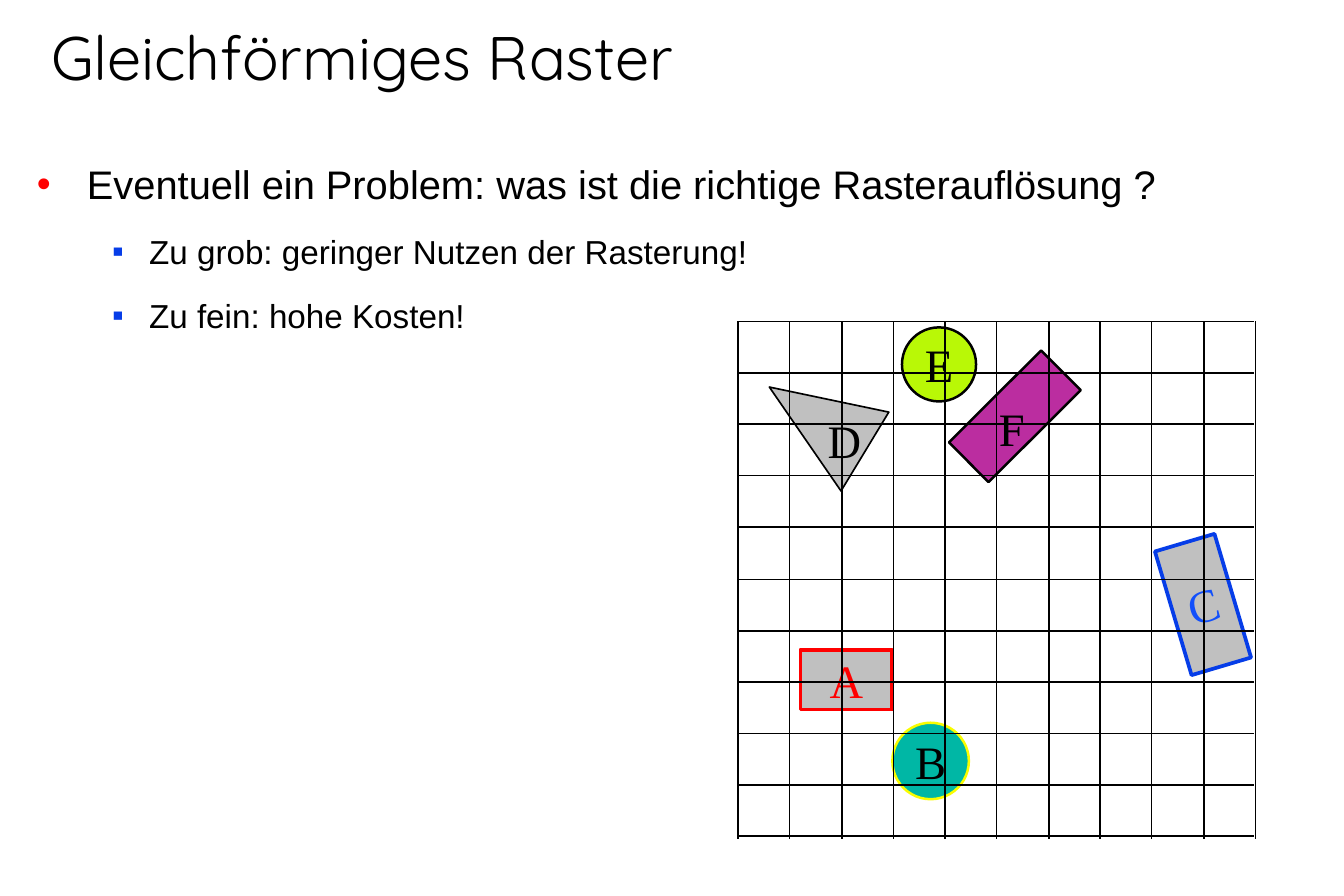
"""Build the slide on choosing the resolution of a uniform grid."""
from dataclasses import dataclass
from typing import Optional

from lxml.etree import SubElement
from pptx import Presentation
from pptx.dml.color import RGBColor
from pptx.enum.shapes import MSO_CONNECTOR as Connector, MSO_SHAPE as Preset
from pptx.enum.text import MSO_ANCHOR as Anchor, PP_ALIGN as Align
from pptx.oxml.ns import qn
from pptx.shapes.base import BaseShape
from pptx.shapes.shapetree import SlideShapes
from pptx.text.text import TextFrame
from pptx.util import Pt

PX = 9144
BLACK = RGBColor(0x00, 0x00, 0x00)
GRAY = RGBColor(0xC0, 0xC0, 0xC0)
RED = RGBColor(0xFF, 0x00, 0x00)
BLUE = RGBColor(0x06, 0x3D, 0xE8)
LETTER_BLUE = RGBColor(0x11, 0x4F, 0xFB)
LIME = RGBColor(0xB9, 0xF8, 0x06)
TEAL = RGBColor(0x00, 0xB7, 0xA5)
YELLOW = RGBColor(0xFA, 0xFD, 0x00)
PURPLE = RGBColor(0xBB, 0x2D, 0xA0)

GRID_LEFT, GRID_TOP, GRID_RIGHT, GRID_BOTTOM = 618, 269, 1051, 700
GRID_CELLS = 10
GRID_OVERHANG = 2


@dataclass(frozen=True)
class Box:
    left: int
    top: int
    width: int
    height: int

    def emu(self) -> tuple[int, int, int, int]:
        return self.left * PX, self.top * PX, self.width * PX, self.height * PX


@dataclass(frozen=True)
class Bullet:
    char: str
    color: RGBColor
    margin: int
    hang: int


@dataclass(frozen=True)
class Statement:
    text: str
    size: int
    level: int
    bullet: Bullet


@dataclass(frozen=True)
class SceneObject:
    preset: Preset
    box: Box
    fill: RGBColor
    outline: RGBColor
    weight: float
    letter: str
    letter_color: RGBColor = BLACK
    rotation: float = 0
    letter_box: Optional[Box] = None


@dataclass(frozen=True)
class Triangle:
    corners: tuple[tuple[int, int], ...]
    fill: RGBColor
    outline: RGBColor
    weight: float
    letter: str
    letter_box: Box


TITLE_BOX = Box(33, -7, 1017, 90)
STATEMENTS_BOX = Box(21, 125, 1077, 170)
MAIN_BULLET = Bullet("•", RED, 42, 42)
SUB_BULLET = Bullet("▪", BLUE, 94, 31)
STATEMENTS = (
    Statement("Eventuell ein Problem: was ist die richtige Rasterauflösung ?", 24, 0, MAIN_BULLET),
    Statement("Zu grob: geringer Nutzen der Rasterung!", 20, 1, SUB_BULLET),
    Statement("Zu fein: hohe Kosten!", 20, 1, SUB_BULLET),
)
SCENE = (
    SceneObject(Preset.RECTANGLE, Box(670, 544, 77, 50), GRAY, RED, 2.25, "A", RED),
    SceneObject(Preset.OVAL, Box(755, 274, 62, 62), LIME, BLACK, 1.5, "E"),
    SceneObject(Preset.RECTANGLE, Box(981, 452, 52, 108), GRAY, BLUE, 2.25, "C", LETTER_BLUE, 343.5),
    Triangle(((644, 324), (704, 411), (744, 345)), GRAY, BLACK, 1, "D", Box(683, 340, 42, 57)),
    SceneObject(Preset.OVAL, Box(747, 605, 64, 64), TEAL, YELLOW, 1.5, "B"),
    SceneObject(Preset.RECTANGLE, Box(826, 294, 47, 109), PURPLE, BLACK, 1.5, "F",
                rotation=45.1, letter_box=Box(826, 330, 42, 57)),
)


def write(frame: TextFrame, text: str, *, font: str, size: int, color: RGBColor = BLACK,
          align: Align = Align.LEFT, line_spacing: float = 1.0, gap: int = 0,
          level: int = 0, bullet: Optional[Bullet] = None) -> None:
    paragraph = frame.paragraphs[0] if not frame.text else frame.add_paragraph()
    paragraph.alignment = align
    paragraph.level = level
    paragraph.line_spacing = line_spacing
    paragraph.space_before = paragraph.space_after = Pt(gap)
    run = paragraph.add_run()
    run.text = text
    run.font.name = font
    run.font.size = Pt(size)
    run.font.color.rgb = color
    if bullet:
        properties = paragraph._p.get_or_add_pPr()
        properties.set("marL", str(bullet.margin * PX))
        properties.set("indent", str(-bullet.hang * PX))
        bullet_color = SubElement(properties, qn("a:buClr"))
        SubElement(bullet_color, qn("a:srgbClr"), val=str(bullet.color))
        SubElement(properties, qn("a:buFont"), typeface="Arial")
        SubElement(properties, qn("a:buChar"), char=bullet.char)


def add_text_frame(shapes: SlideShapes, box: Box, anchor: Anchor) -> TextFrame:
    frame = shapes.add_textbox(*box.emu()).text_frame
    frame.word_wrap = True
    frame.vertical_anchor = anchor
    return frame


def write_letter(frame: TextFrame, letter: str, color: RGBColor = BLACK) -> None:
    frame.word_wrap = False
    frame.vertical_anchor = Anchor.MIDDLE
    write(frame, letter, font="Times New Roman", size=28, color=color, align=Align.CENTER)


def paint(shape: BaseShape, item: SceneObject | Triangle) -> None:
    shape.shadow.inherit = False
    shape.fill.solid()
    shape.fill.fore_color.rgb = item.fill
    shape.line.color.rgb = item.outline
    shape.line.width = Pt(item.weight)


def add_scene_item(shapes: SlideShapes, item: SceneObject | Triangle) -> None:
    if isinstance(item, Triangle):
        builder = shapes.build_freeform(*item.corners[0], scale=PX)
        builder.add_line_segments(item.corners[1:], close=True)
        body = builder.convert_to_shape()
    else:
        body = shapes.add_shape(item.preset, *item.box.emu())
        body.rotation = item.rotation
    paint(body, item)
    if item.letter_box:
        write_letter(add_text_frame(shapes, item.letter_box, Anchor.MIDDLE), item.letter)
    else:
        write_letter(body.text_frame, item.letter, item.letter_color)


def add_grid_line(shapes: SlideShapes, x1: int, y1: int, x2: int, y2: int) -> None:
    line = shapes.add_connector(Connector.STRAIGHT, x1 * PX, y1 * PX, x2 * PX, y2 * PX)
    line.line.color.rgb = BLACK
    line.line.width = Pt(1)
    SubElement(line._element.spPr, qn("a:effectLst"))


def add_grid(shapes: SlideShapes) -> None:
    for step in range(GRID_CELLS + 1):
        x = GRID_LEFT + round(step * (GRID_RIGHT - GRID_LEFT) / GRID_CELLS)
        y = GRID_TOP + round(step * (GRID_BOTTOM - GRID_TOP) / GRID_CELLS)
        add_grid_line(shapes, GRID_LEFT, y, GRID_RIGHT - 1, y)
        add_grid_line(shapes, x, GRID_TOP, x, GRID_BOTTOM + GRID_OVERHANG)


def main() -> None:
    deck = Presentation()
    deck.slide_width, deck.slide_height = 1125 * PX, 750 * PX
    shapes = deck.slides.add_slide(deck.slide_layouts[6]).shapes

    title = add_text_frame(shapes, TITLE_BOX, Anchor.BOTTOM)
    write(title, "Gleichförmiges Raster", font="Quicksand", size=37, line_spacing=1.04)
    for item in SCENE:
        add_scene_item(shapes, item)
    statements = add_text_frame(shapes, STATEMENTS_BOX, Anchor.TOP)
    for statement in STATEMENTS:
        write(statements, statement.text, font="Arial", size=statement.size, line_spacing=1.1,
              gap=6, level=statement.level, bullet=statement.bullet)
    add_grid(shapes)
    deck.save("out.pptx")


if __name__ == "__main__":
    main()
